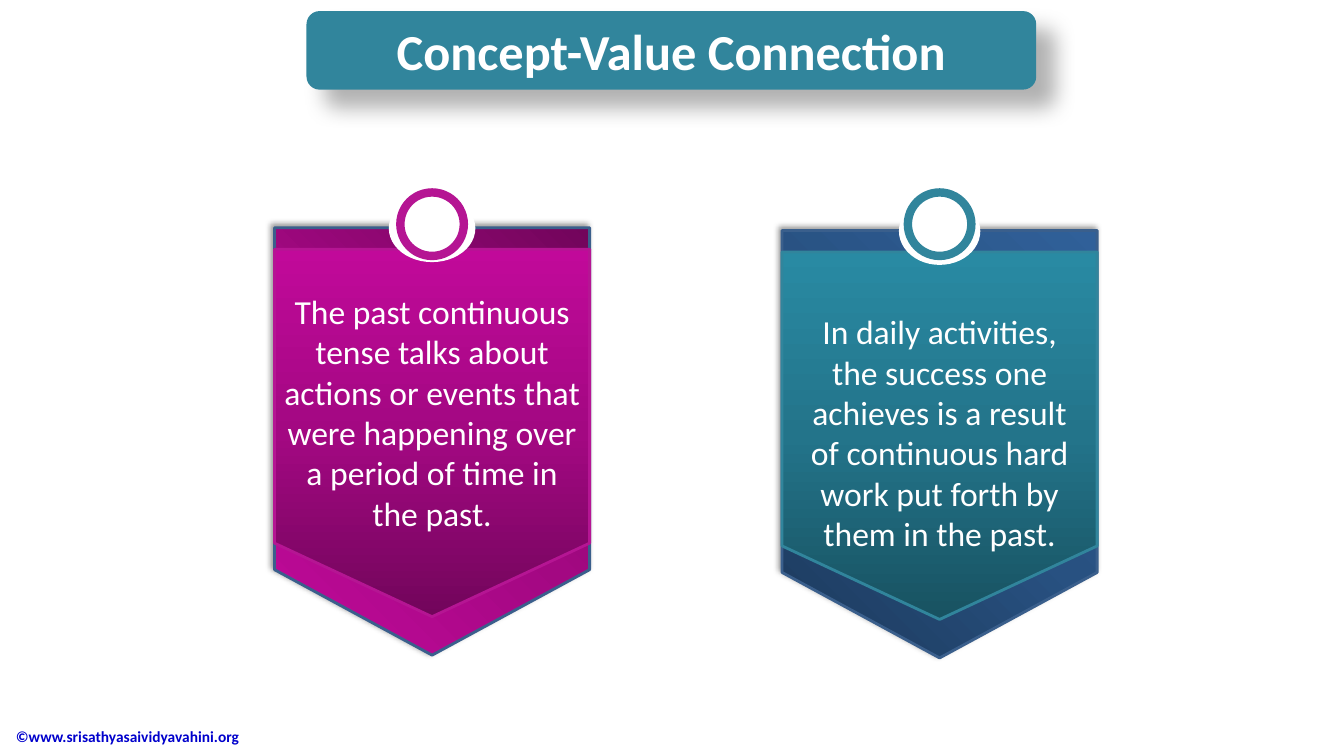
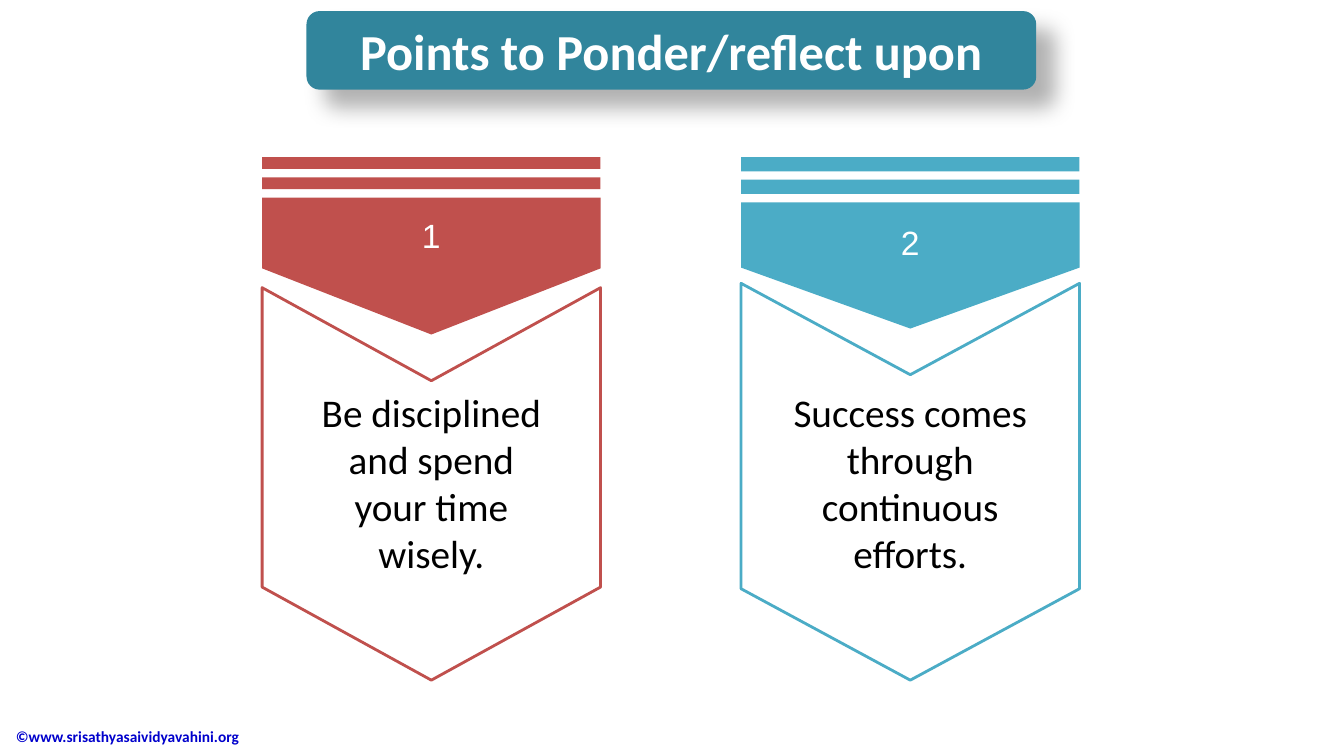
from lxml.etree import SubElement
from pptx import Presentation
from pptx.dml.color import RGBColor
from pptx.enum.shapes import MSO_SHAPE
from pptx.enum.text import MSO_ANCHOR, PP_ALIGN
from pptx.oxml import parse_xml
from pptx.oxml.ns import nsdecls, qn
from pptx.util import Cm, Pt

WHITE = RGBColor(0xFF, 0xFF, 0xFF)
BLACK = RGBColor(0x00, 0x00, 0x00)
LINK_BLUE = RGBColor(0x00, 0x00, 0xCC)
TEAL = RGBColor(0x31, 0x85, 0x9C)
SLATE = RGBColor(0x3A, 0x5F, 0x8C)
MAGENTA = RGBColor(0xB5, 0x15, 0x93)
RED = RGBColor(0xC0, 0x50, 0x4D)
AQUA = RGBColor(0x4B, 0xAC, 0xC6)
MAGENTA_SHADES = [RGBColor(0x72, 0x05, 0x5B), RGBColor(0xA3, 0x08, 0x82), RGBColor(0xC1, 0x09, 0x9A)]
NAVY_SHADES = [RGBColor(0x1C, 0x39, 0x5B), RGBColor(0x28, 0x51, 0x81), RGBColor(0x30, 0x60, 0x99)]
TEAL_SHADES = [RGBColor(0x18, 0x52, 0x61), RGBColor(0x23, 0x74, 0x8A), RGBColor(0x29, 0x8A, 0xA3)]

FOOTER = "©www.srisathyasaividyavahini.org"

# Lengths are in centimetres; cx is the horizontal centre of a column.
RIBBONS = [
    dict(cx=10.89, top=5.74, accent=MAGENTA, back=MAGENTA_SHADES, back_angle=135,
         front=MAGENTA_SHADES, halo_width=2.11, text_top=7.21, text_width=7.95,
         text="The past continuous tense talks about actions or events that were "
              "happening over a period of time in the past."),
    dict(cx=23.68, top=5.81, accent=TEAL, back=NAVY_SHADES, back_angle=None,
         front=TEAL_SHADES, halo_width=1.98, text_top=7.72, text_width=7.59,
         text="In daily activities, the success one achieves is a result of "
              "continuous hard work put forth by them in the past."),
]
POINTS = [
    dict(cx=10.87, color=RED, stripe=0.3, pitch=0.51, plate=3.45, number_gap=0.3,
         panel_top=7.25, notch=0.275, text_width=6.05,
         number="1", text="Be disciplined and spend your time wisely."),
    dict(cx=22.94, color=AQUA, stripe=0.36, pitch=0.57, plate=3.18, number_gap=0.37,
         panel_top=7.14, notch=0.27, text_width=7.77,
         number="2", text="Success comes through continuous efforts."),
]
RIBBON_WIDTH, BACK_HEIGHT, FRONT_HEIGHT, FRONT_DROP = 7.94, 10.77, 9.26, 0.54
POINT_WIDTH, POINT_TOP, POINT_BOTTOM, POINT_TEXT_TOP = 8.53, 3.96, 17.14, 9.65


def write(s, text, size=24, color=WHITE, font="Calibri", bold=False,
          align=PP_ALIGN.CENTER, anchor=MSO_ANCHOR.TOP):
    tf = s.text_frame
    tf.word_wrap = True
    tf.vertical_anchor = anchor
    p = tf.paragraphs[0]
    p.alignment = align
    r = p.add_run()
    r.text = text
    r.font.name, r.font.size, r.font.bold = font, Pt(size), bold
    r.font.color.rgb = color


def add_text(slide, cx, top, width, height, text, **style):
    s = slide.shapes.add_textbox(Cm(cx - width / 2), Cm(top), Cm(width), Cm(height))
    write(s, text, **style)


def add_shape(slide, kind, cx, top, width, height, fill=None, line=None, weight=2,
              adj=None, turned=False):
    """Place a shape by its visible box; turned shapes point downwards."""
    cy = top + height / 2
    w, h = (height, width) if turned else (width, height)
    s = slide.shapes.add_shape(kind, Cm(cx - w / 2), Cm(cy - h / 2), Cm(w), Cm(h))
    s.shadow.inherit = False
    if turned:
        s.rotation = 90
    if adj is not None:
        s.adjustments[0] = adj
    if fill is not None:
        s.fill.solid()
        s.fill.fore_color.rgb = fill
    if line is None:
        s.line.fill.background()
    else:
        s.line.color.rgb = line
        s.line.width = Pt(weight)
    return s


def set_gradient(s, colors, angle=None):
    """Linear at a clockwise angle, or radial from the bottom left without one."""
    stops = "".join(f'<a:gs pos="{i * 50000}"><a:srgbClr val="{c}"/></a:gs>'
                    for i, c in enumerate(colors))
    if angle is None:
        way = ('<a:path path="circle">'
               '<a:fillToRect l="0" t="100000" r="100000" b="0"/></a:path>')
    else:
        way = f'<a:lin ang="{angle * 60000}" scaled="1"/>'
    fill = parse_xml(f'<a:gradFill {nsdecls("a")} rotWithShape="1">'
                     f'<a:gsLst>{stops}</a:gsLst>{way}</a:gradFill>')
    s._element.spPr.find(qn("a:prstGeom")).addnext(fill)


def set_shadow(s, alpha, blur, dist, angle):
    effects = s._element.spPr.find(qn("a:effectLst"))
    shadow = SubElement(effects, qn("a:outerShdw"), blurRad=str(Pt(blur)), dist=str(Pt(dist)),
                        dir=str(angle * 60000), algn="ctr", rotWithShape="0")
    color = SubElement(shadow, qn("a:srgbClr"), val=str(BLACK))
    SubElement(color, qn("a:alpha"), val=str(alpha * 1000))


def add_slide(prs, title):
    slide = prs.slides.add_slide(prs.slide_layouts[6])
    add_text(slide, 4.65, 18.03, 9, 1.04, FOOTER, size=11, color=LINK_BLUE, bold=True,
             align=PP_ALIGN.LEFT, anchor=MSO_ANCHOR.MIDDLE)
    banner = add_shape(slide, MSO_SHAPE.ROUNDED_RECTANGLE, 16.92, 0.28, 18.39, 1.98, TEAL)
    set_shadow(banner, 30, 15, 18, 45)
    write(banner, title, size=36, bold=True, anchor=MSO_ANCHOR.MIDDLE)
    return slide


def add_ribbon(slide, d):
    cx, top = d["cx"], d["top"]
    pennant = MSO_SHAPE.FLOWCHART_OFFPAGE_CONNECTOR
    back = add_shape(slide, pennant, cx, top, RIBBON_WIDTH, BACK_HEIGHT, line=SLATE)
    set_gradient(back, d["back"], d["back_angle"])
    set_shadow(back, 40, 4, 3, 225)
    front = add_shape(slide, pennant, cx, top + FRONT_DROP, RIBBON_WIDTH, FRONT_HEIGHT,
                      line=d["accent"])
    set_gradient(front, d["front"], 270)
    add_shape(slide, MSO_SHAPE.OVAL, cx, top - 0.8, d["halo_width"], 1.63, WHITE, WHITE)
    add_shape(slide, MSO_SHAPE.OVAL, cx, 4.85, 1.6, 1.6, WHITE, d["accent"], weight=6)
    add_text(slide, cx, d["text_top"], d["text_width"], 6.4, d["text"])


def add_point(slide, d):
    cx, color = d["cx"], d["color"]
    for i in range(2):
        add_shape(slide, MSO_SHAPE.RECTANGLE, cx, POINT_TOP + i * d["pitch"],
                  POINT_WIDTH, d["stripe"], color)
    plate_top = POINT_TOP + 2 * d["pitch"]
    add_shape(slide, MSO_SHAPE.PENTAGON, cx, plate_top, POINT_WIDTH, d["plate"], color,
              adj=0.483, turned=True)
    add_shape(slide, MSO_SHAPE.CHEVRON, cx, d["panel_top"], POINT_WIDTH,
              POINT_BOTTOM - d["panel_top"], WHITE, color, adj=d["notch"], turned=True)
    add_text(slide, cx, plate_top + d["number_gap"], 2.36, 1.27, d["number"], font="Arial")
    add_text(slide, cx, POINT_TEXT_TOP, d["text_width"], 5.05, d["text"], size=28, color=BLACK)


def main():
    prs = Presentation()
    prs.slide_width, prs.slide_height = Cm(33.87), Cm(19.05)
    slide = add_slide(prs, "Concept-Value Connection")
    for ribbon in RIBBONS:
        add_ribbon(slide, ribbon)
    slide = add_slide(prs, "Points to Ponder/reflect upon")
    for point in POINTS:
        add_point(slide, point)
    prs.save("out.pptx")


if __name__ == "__main__":
    main()
